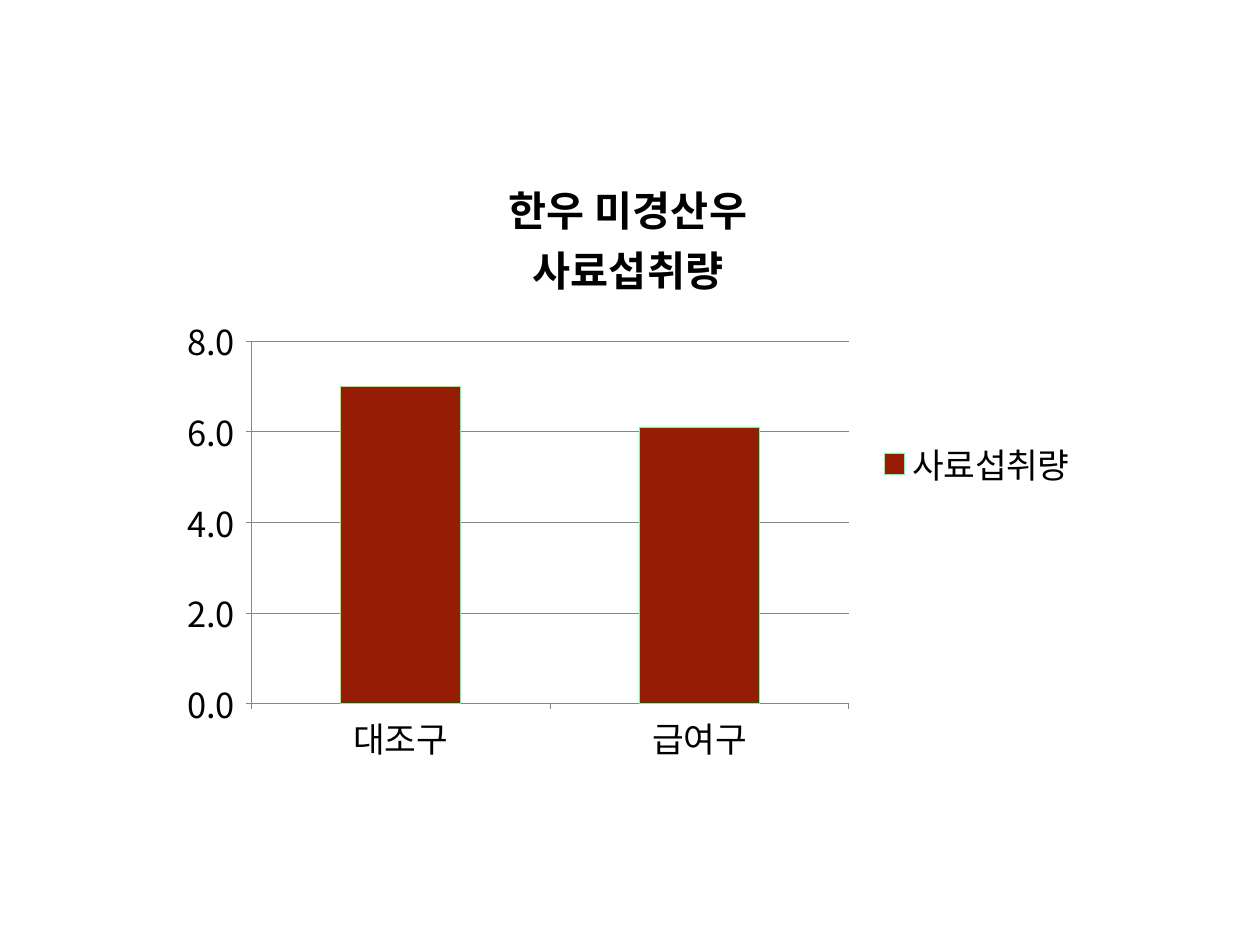
import dataclasses

import lxml.etree
import pptx
import pptx.chart.chart
import pptx.chart.data
import pptx.dml.color
import pptx.enum.chart
import pptx.enum.text
import pptx.oxml.ns
import pptx.text.text
import pptx.util


@dataclasses.dataclass(frozen=True)
class Theme:
    font: str = "Noto Sans CJK KR"
    text: str = "000000"
    bar: str = "961C05"
    bar_edge: str = "69FF99"
    rule: str = "868686"
    title_size: float = 33.6
    label_size: float = 28
    line_width: float = 0.75


@dataclasses.dataclass(frozen=True)
class Area:
    """A rectangle in shares of its container."""
    x: float
    y: float
    w: float
    h: float


@dataclasses.dataclass(frozen=True)
class FeedGroup:
    name: str
    intake: float


THEME = Theme()
SLIDE_WIDTH = pptx.util.Inches(14.22)
SLIDE_HEIGHT = pptx.util.Inches(10.67)
CHART_AREA = Area(1.9 / 14.22, 1.77 / 10.67, 10.38 / 14.22, 6.94 / 10.67)
PLOT_AREA = Area(0.09, 0.3, 0.65, 0.59)
TITLE_LINES = ("한우 미경산우", "사료섭취량")
SERIES_NAME = "사료섭취량"
GROUPS = (FeedGroup("대조구", 7), FeedGroup("급여구", 6.1))


def color(value: str) -> pptx.dml.color.RGBColor:
    return pptx.dml.color.RGBColor.from_string(value)


def style_font(font: pptx.text.text.Font, size: float, bold: bool) -> None:
    font.name = THEME.font
    font.size = pptx.util.Pt(size)
    font.bold = bold
    font.color.rgb = color(THEME.text)


def style_line(line_format, value: str) -> None:
    line_format.color.rgb = color(value)
    line_format.width = pptx.util.Pt(THEME.line_width)


def add_intake_chart(slide) -> pptx.chart.chart.Chart:
    data = pptx.chart.data.CategoryChartData()
    data.categories = [group.name for group in GROUPS]
    data.add_series(SERIES_NAME, [group.intake for group in GROUPS])
    frame = slide.shapes.add_chart(
        pptx.enum.chart.XL_CHART_TYPE.COLUMN_CLUSTERED,
        round(CHART_AREA.x * SLIDE_WIDTH), round(CHART_AREA.y * SLIDE_HEIGHT),
        round(CHART_AREA.w * SLIDE_WIDTH), round(CHART_AREA.h * SLIDE_HEIGHT),
        data)
    chart = frame.chart
    style_font(chart.font, THEME.label_size, False)
    return chart


def style_title(chart: pptx.chart.chart.Chart) -> None:
    chart.has_title = True
    text_frame = chart.chart_title.text_frame
    text_frame.text = "\n".join(TITLE_LINES)
    for paragraph in text_frame.paragraphs:
        paragraph.alignment = pptx.enum.text.PP_ALIGN.CENTER
        for run in paragraph.runs:
            style_font(run.font, THEME.title_size, True)


def style_bars(chart: pptx.chart.chart.Chart) -> None:
    plot = chart.plots[0]
    plot.gap_width = 150
    plot.vary_by_categories = False
    bars = plot.series[0].format
    bars.fill.solid()
    bars.fill.fore_color.rgb = color(THEME.bar)
    style_line(bars.line, THEME.bar_edge)


def style_axes(chart: pptx.chart.chart.Chart) -> None:
    for axis in (chart.category_axis, chart.value_axis):
        axis.major_tick_mark = pptx.enum.chart.XL_TICK_MARK.OUTSIDE
        axis.minor_tick_mark = pptx.enum.chart.XL_TICK_MARK.NONE
        style_line(axis.format.line, THEME.rule)
    value_axis = chart.value_axis
    value_axis.minimum_scale = 0
    value_axis.maximum_scale = 8
    value_axis.major_unit = 2
    value_axis.has_major_gridlines = True
    style_line(value_axis.major_gridlines.format.line, THEME.rule)
    value_axis.tick_labels.number_format = r"#,##0.0_);[Red]\(#,##0.0\)"
    value_axis.tick_labels.number_format_is_linked = False


def style_legend(chart: pptx.chart.chart.Chart) -> None:
    chart.has_legend = True
    chart.legend.position = pptx.enum.chart.XL_LEGEND_POSITION.RIGHT
    chart.legend.include_in_layout = False


def place_plot(chart: pptx.chart.chart.Chart, area: Area) -> None:
    qn = pptx.oxml.ns.qn
    plot_area = chart.element.find(".//" + qn("c:plotArea"))
    for old_layout in plot_area.findall(qn("c:layout")):
        plot_area.remove(old_layout)
    layout = lxml.etree.Element(qn("c:layout"))
    manual = lxml.etree.SubElement(layout, qn("c:manualLayout"))
    settings = {"layoutTarget": "inner", "xMode": "edge", "yMode": "edge",
                **dataclasses.asdict(area)}
    for name, value in settings.items():
        lxml.etree.SubElement(manual, qn("c:" + name)).set("val", str(value))
    plot_area.insert(0, layout)


def set_east_asian_font(chart: pptx.chart.chart.Chart) -> None:
    for latin in list(chart.element.iter(pptx.oxml.ns.qn("a:latin"))):
        east_asian = lxml.etree.Element(pptx.oxml.ns.qn("a:ea"))
        east_asian.set("typeface", THEME.font)
        latin.addnext(east_asian)


def main() -> None:
    presentation = pptx.Presentation()
    presentation.slide_width = SLIDE_WIDTH
    presentation.slide_height = SLIDE_HEIGHT
    slide = presentation.slides.add_slide(presentation.slide_layouts[6])

    # Feed intake chart
    chart = add_intake_chart(slide)
    style_title(chart)
    style_bars(chart)
    style_axes(chart)
    style_legend(chart)

    # Plot position and Korean typeface
    place_plot(chart, PLOT_AREA)
    set_east_asian_font(chart)

    presentation.save("out.pptx")


if __name__ == "__main__":
    main()
